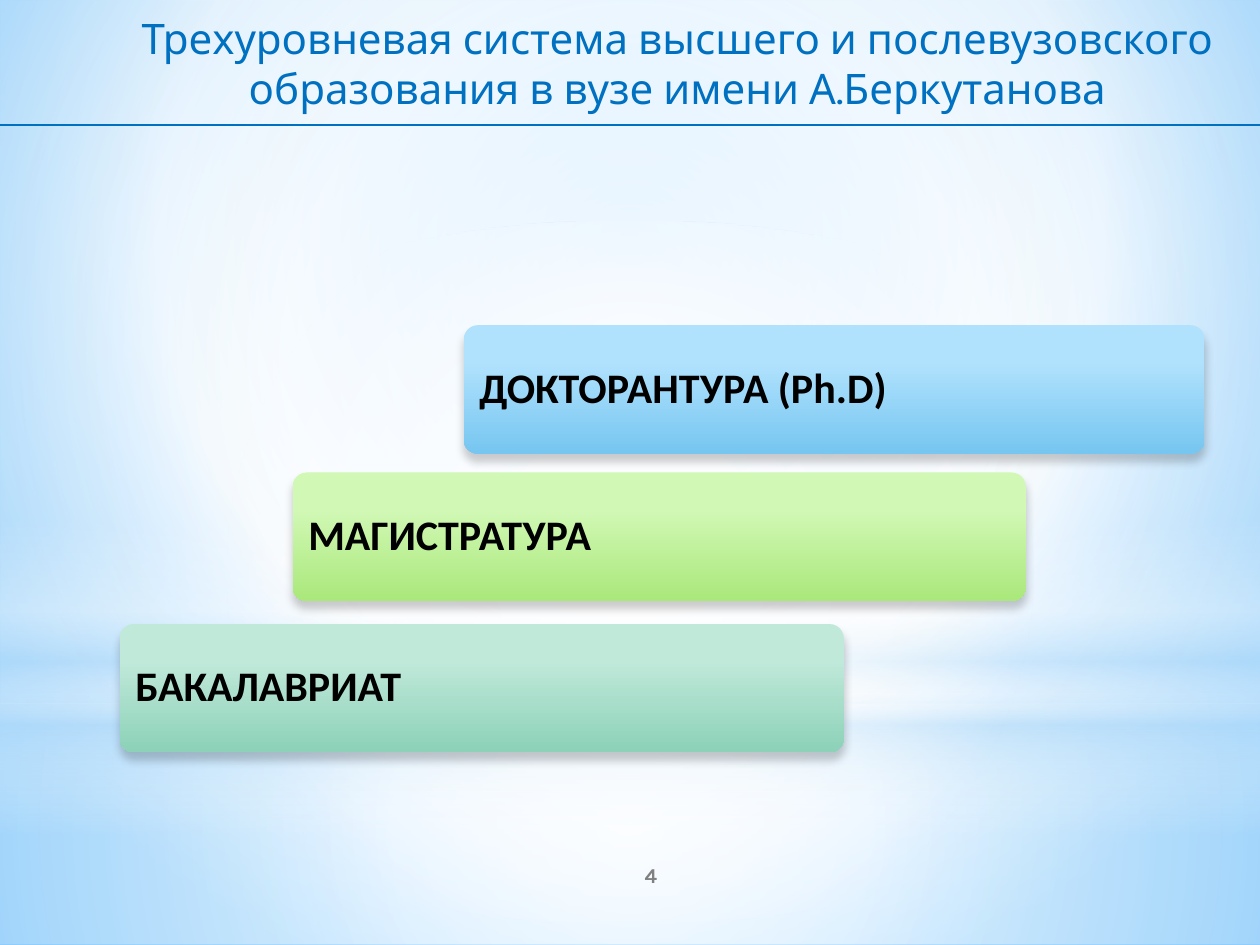
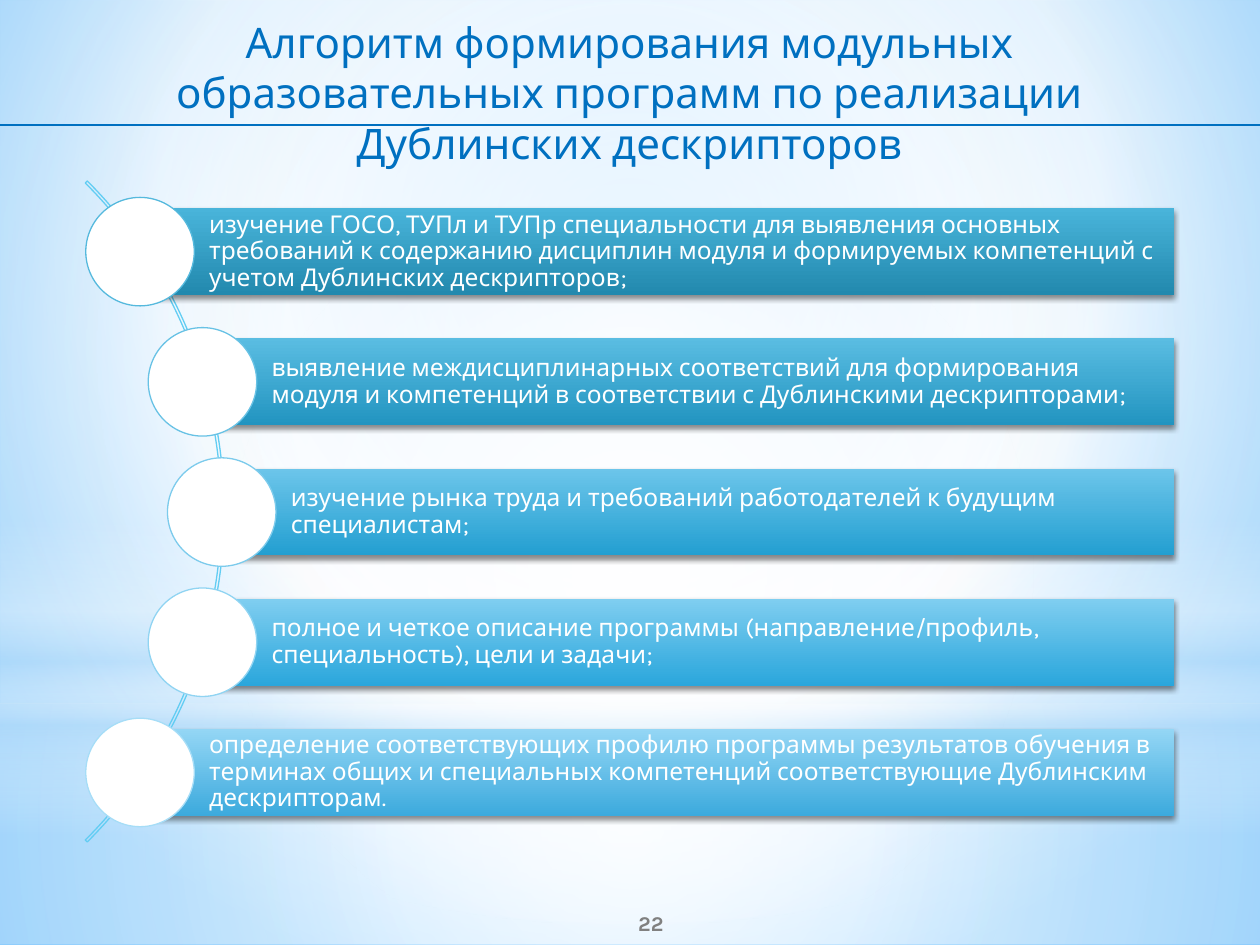
from lxml import etree
from pptx import Presentation
from pptx.dml.color import RGBColor
from pptx.enum.shapes import MSO_CONNECTOR, MSO_SHAPE
from pptx.enum.text import MSO_ANCHOR, MSO_AUTO_SIZE, PP_ALIGN
from pptx.oxml.ns import qn
from pptx.util import Pt

RECT, ROUNDED = MSO_SHAPE.RECTANGLE, MSO_SHAPE.ROUNDED_RECTANGLE
OVAL, ARC = MSO_SHAPE.OVAL, MSO_SHAPE.BLOCK_ARC
LEFT, CENTER = PP_ALIGN.LEFT, PP_ALIGN.CENTER
TOP, MIDDLE = MSO_ANCHOR.TOP, MSO_ANCHOR.MIDDLE

# Content
LEVELS_TITLE = ("Трехуровневая система высшего и послевузовского "
                "образования в вузе имени А.Беркутанова")
# text, left, top, width, gradient
LEVELS = [
    ("ДОКТОРАНТУРА (Ph.D)", 265, 185.8, 423.4, ("B1E2FD", "76C6F1")),
    ("МАГИСТРАТУРА", 167.2, 270, 419, ("D1F8B5", "AAE87B")),
    ("БАКАЛАВРИАТ", 68.4, 356.6, 413.8, ("C0E9DA", "8CD1B8")),
]
STEPS_TITLE = ("Алгоритм формирования модульных образовательных программ "
               "по реализации Дублинских дескрипторов")
# text, circle centre, gradient, circle outline
STEPS = [
    ("изучение ГОСО, ТУПл и ТУПр специальности для выявления основных "
     "требований к содержанию дисциплин модуля и формируемых компетенций с "
     "учетом Дублинских дескрипторов;", 80, ("49B4DA", "2289AE"), "55B9DD"),
    ("выявление междисциплинарных соответствий для формирования модуля и "
     "компетенций в соответствии с Дублинскими дескрипторами;",
     115.7, ("5ABDE2", "2294C0"), "68C2E5"),
    ("изучение рынка труда и требований работодателей к будущим "
     "специалистам;", 126.7, ("6CC5EA", "239FD1"), "7CCBEC"),
    ("полное и четкое описание программы (направление/профиль, "
     "специальность), цели и задачи;", 115.7, ("7FCEF0", "2AA6DC"), "90D4F2"),
    ("определение соответствующих профилю программы результатов обучения в "
     "терминах общих и специальных компетенций соответствующие Дублинским "
     "дескрипторам.", 80, ("94D6F5", "3CAADD"), "A6DDF7"),
]

# Shared style
COLORS = {"title": "0070C0", "number": "808080", "white": "FFFFFF",
          "black": "000000", "haze": "B4DCFA", "arc": "62CDF3"}
WHITE, HAZE = COLORS["white"], COLORS["haze"]
TITLE_FONT, LEVEL_FONT = "Karla", "Calibri"
SLIDE_W, SLIDE_H = 720, 540
CENTRED = (50, 50, 50, 50)

# Gradient stops: position, colour, opacity (percent)
BACKGROUND = [(0, "9ED5FF", 100), (60, WHITE, 100), (100, "5BB9FF", 100)]
# shape, top, height, stops, focus (None for a vertical gradient)
BACKDROP = [
    (RECT, 402, 138,
     [(0, WHITE, 91), (37, WHITE, 76), (100, HAZE, 79)], CENTRED),
    (RECT, 0, 402,
     [(0, WHITE, 89), (48, WHITE, 62), (100, HAZE, 79)], CENTRED),
    (RECT, 297, 180,
     [(0, WHITE, 0), (29, WHITE, 30), (45, HAZE, 40), (55, WHITE, 26),
      (65, HAZE, 60), (100, WHITE, 0)], None),
    (OVAL, 126, 402, [(0, WHITE, 100), (56, WHITE, 0)], CENTRED),
]


def add_xml(parent, tag, **attrs):
    child = etree.SubElement(parent, qn(tag))
    for name, value in attrs.items():
        child.set(name, str(value))
    return child


def add_color(parent, color, opacity):
    clr = add_xml(parent, "a:srgbClr", val=color)
    if opacity < 100:
        add_xml(clr, "a:alpha", val=opacity * 1000)


def set_gradient(fill, owner, stops, focus=None):
    """Circular gradient around focus, or top to bottom without one."""
    fill.gradient()
    grad = owner.find(".//" + qn("a:gradFill"))
    for child in list(grad):
        grad.remove(child)
    stop_list = add_xml(grad, "a:gsLst")
    for pos, color, opacity in stops:
        add_color(add_xml(stop_list, "a:gs", pos=pos * 1000), color, opacity)
    if focus:
        circle = add_xml(grad, "a:path", path="circle")
        sides = {side: pct * 1000 for side, pct in zip("ltrb", focus)}
        add_xml(circle, "a:fillToRect", **sides)
    else:
        add_xml(grad, "a:lin", ang=90 * 60000, scaled=0)


def set_shadow(sp, opacity, blur, dist):
    effects = sp._element.spPr.find(qn("a:effectLst"))
    shadow = add_xml(effects, "a:outerShdw", blurRad=Pt(blur), dist=Pt(dist),
                     dir=90 * 60000, algn="ctr", rotWithShape=0)
    add_color(shadow, COLORS["black"], opacity)


def add_shape(slide, kind, left, top, width, height, line=None):
    sp = slide.shapes.add_shape(kind, Pt(left), Pt(top), Pt(width), Pt(height))
    sp.shadow.inherit = False
    if line:
        sp.line.color.rgb = RGBColor.from_string(line)
        sp.line.width = Pt(0.75)
    else:
        sp.line.fill.background()
    return sp


def add_card(slide, kind, box, colors, start, shadow):
    sp = add_shape(slide, kind, *box)
    stops = [(start, colors[0], 100), (100, colors[1], 100)]
    set_gradient(sp.fill, sp._element.spPr, stops)
    set_shadow(sp, *shadow)
    return sp


def write(sp, text, size, color, font=TITLE_FONT, bold=False, align=CENTER,
          anchor=MIDDLE, insets=(7.2, 3.6, 7.2, 3.6), spacing=None):
    tf = sp.text_frame
    tf.word_wrap = True
    tf.vertical_anchor = anchor
    tf.margin_left, tf.margin_top, tf.margin_right, tf.margin_bottom = (
        Pt(inset) for inset in insets)
    p = tf.paragraphs[0]
    p.alignment = align
    if spacing:
        p.line_spacing = spacing
    r = p.add_run()
    r.text = text
    r.font.name, r.font.size, r.font.bold = font, Pt(size), bold
    r.font.color.rgb = RGBColor.from_string(COLORS[color])


def add_text(slide, left, top, width, height, *args, **style):
    sp = slide.shapes.add_textbox(Pt(left), Pt(top), Pt(width), Pt(height))
    write(sp, *args, **style)
    return sp


def add_base_slide(prs, title, title_left, title_top, number, number_top):
    slide = prs.slides.add_slide(prs.slide_layouts[6])
    set_gradient(slide.background.fill, slide._element, BACKGROUND,
                 (20, 10, 20, 60))
    for kind, top, height, stops, focus in BACKDROP:
        sp = add_shape(slide, kind, 0, top, SLIDE_W, height)
        set_gradient(sp.fill, sp._element.spPr, stops, focus)
    add_text(slide, 300, number_top, 144, 28.8, number, 12, "number", bold=True)
    sp = add_text(slide, title_left, title_top, 654.5, 65.5, title, 24, "title",
                  anchor=TOP)
    sp.text_frame.auto_size = MSO_AUTO_SIZE.SHAPE_TO_FIT_TEXT
    # Rule under the title
    rule = slide.shapes.add_connector(MSO_CONNECTOR.STRAIGHT, 0, Pt(71.3),
                                      Pt(SLIDE_W), Pt(71.3))
    rule.line.color.rgb = RGBColor.from_string(COLORS["title"])
    rule.line.width = Pt(1)
    add_xml(rule._element.spPr, "a:effectLst")
    return slide


def build_levels(prs):
    slide = add_base_slide(prs, LEVELS_TITLE, 59.8, 3.6, "4", 485.7)
    for text, left, top, width, colors in LEVELS:
        sp = add_card(slide, ROUNDED, (left, top, width, 73.4), colors, 28,
                      (20, 5, 4))
        sp.adjustments[0] = 0.11
        write(sp, text, 24, "black", LEVEL_FONT, True, LEFT,
              insets=(6.6, 8.6, 72, 8.6), spacing=0.9)


def build_steps(prs):
    slide = add_base_slide(prs, STEPS_TITLE, 32.4, 5.8, "22", 513)
    # Arc behind the steps
    arc = add_shape(slide, ARC, -406.1, 25.2, 534.2, 534.2, COLORS["arc"])
    arc.fill.background()
    for i, value in enumerate((189, 27, 0.003)):
        arc.adjustments[i] = value
    # Bars with a circle over the left end of each
    bar_right, bar_h, circle_d, first_mid, pitch = 670.8, 49.7, 62, 143.8, 74.4
    for i, (text, x, colors, outline) in enumerate(STEPS):
        mid = first_mid + i * pitch
        bar = (x, mid - bar_h / 2, bar_right - x, bar_h)
        sp = add_card(slide, RECT, bar, colors, 0, (45, 3.1, 1.8))
        write(sp, text, 14, "white", align=LEFT, insets=(39.5, 2.8, 2.8, 2.8),
              spacing=0.9)
        circle = add_shape(slide, OVAL, x - circle_d / 2, mid - circle_d / 2,
                           circle_d, circle_d, outline)
        circle.fill.solid()
        circle.fill.fore_color.rgb = RGBColor.from_string(WHITE)


def main():
    prs = Presentation()
    prs.slide_width, prs.slide_height = Pt(SLIDE_W), Pt(SLIDE_H)
    build_levels(prs)
    build_steps(prs)
    prs.save("out.pptx")


if __name__ == "__main__":
    main()
